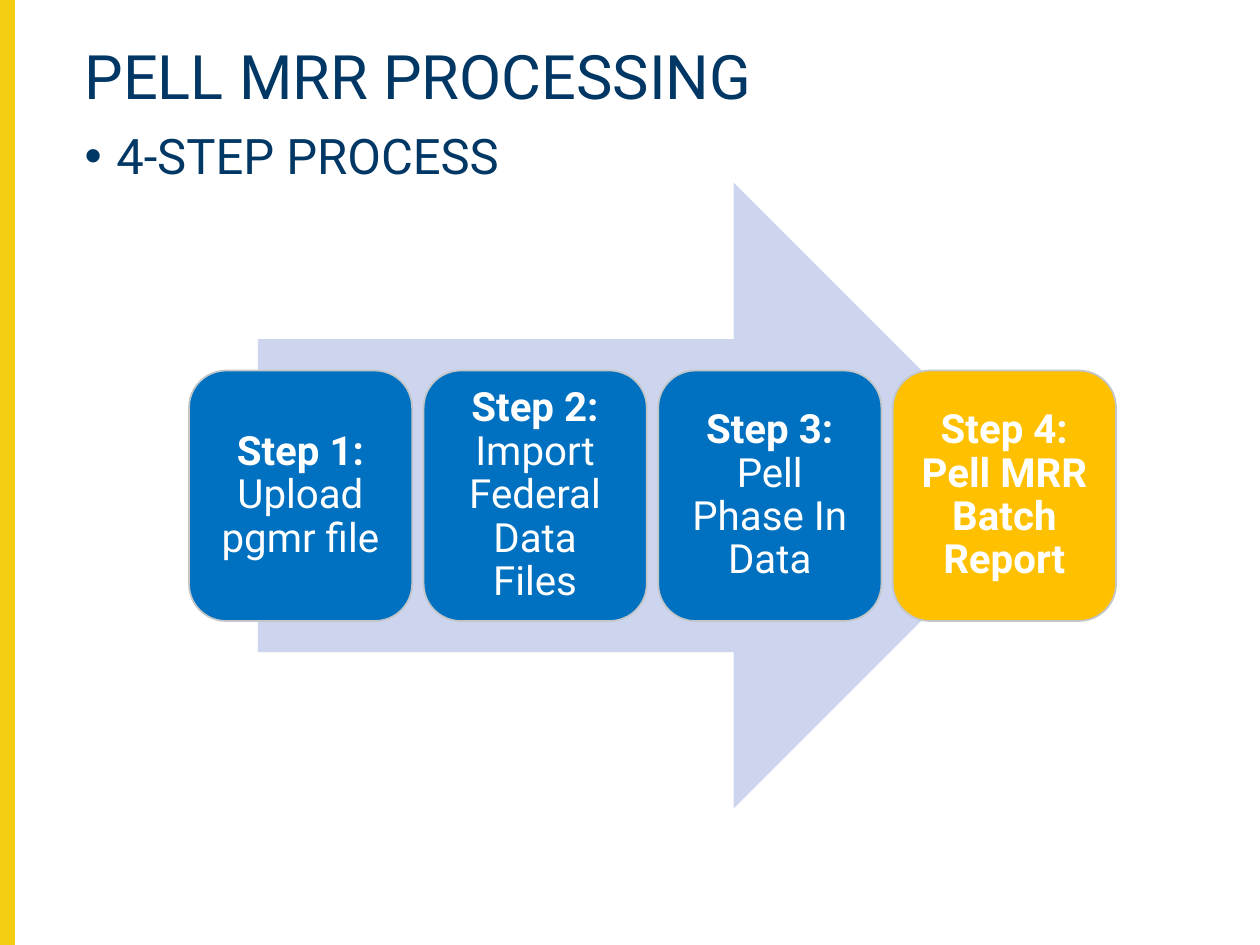
import pptx
import pptx.dml.color
import pptx.enum.shapes
import pptx.enum.text
import pptx.util

Cm = pptx.util.Cm
Pt = pptx.util.Pt
Shape = pptx.enum.shapes.MSO_SHAPE
Anchor = pptx.enum.text.MSO_ANCHOR
Align = pptx.enum.text.PP_ALIGN

TITLE = "PELL MRR PROCESSING"
BULLET = "4-STEP PROCESS"
STEPS = [
    ("Step 1: ", "Upload pgmr file", False, "0070C0"),
    ("Step 2: ", "Import Federal Data Files", False, "0070C0"),
    ("Step 3: ", "Pell Phase In Data", False, "0070C0"),
    ("Step 4: ", "Pell MRR Batch Report", True, "FFC000"),
]
NAVY, WHITE = "003764", "FFFFFF"
STEP_LEFT, STEP_TOP, STEP_WIDTH, STEP_HEIGHT = 3.81, 7.47, 4.5, 5.05
STEP_PITCH = 4.73


def color(value):
    return pptx.dml.color.RGBColor.from_string(value)


def apply(target, values):
    for name, value in values.items():
        setattr(target, name, value)


def place(box, left, top, width, height):
    apply(box, {"left": Cm(left), "top": Cm(top), "width": Cm(width), "height": Cm(height)})


def add_span(para, text, size, ink, bold=False):
    span = para.add_run()
    span.text = text
    apply(span.font, {"name": "Roboto", "size": Pt(size), "bold": bold})
    span.font.color.rgb = color(ink)


def add_shape(page, kind, area, fill, line=None):
    shape = page.shapes.add_shape(kind, *map(Cm, area))
    shape.shadow.inherit = False
    shape.fill.solid()
    shape.fill.fore_color.rgb = color(fill)
    if line:
        shape.line.color.rgb = color(line)
        shape.line.width = Pt(1)
    else:
        shape.line.fill.background()
    return shape


def fill_placeholder(box, area, text, size, space_before):
    place(box, *area)
    apply(box.text_frame, {
        "vertical_anchor": Anchor.TOP,
        "auto_size": pptx.enum.text.MSO_AUTO_SIZE.NONE,
        "word_wrap": True,
    })
    para = box.text_frame.paragraphs[0]
    apply(para, {"alignment": Align.LEFT, "line_spacing": 0.9, "space_before": Pt(space_before)})
    add_span(para, text, size, NAVY)
    return para


def add_step(page, index, label, task, bold, fill):
    area = (STEP_LEFT + index * STEP_PITCH, STEP_TOP, STEP_WIDTH, STEP_HEIGHT)
    frame = add_shape(page, Shape.ROUNDED_RECTANGLE, area, fill, "C3C6C8").text_frame
    margins = ("margin_left", "margin_top", "margin_right", "margin_bottom")
    apply(frame, dict.fromkeys(margins, Cm(0.25)))
    apply(frame, {"word_wrap": True, "vertical_anchor": Anchor.MIDDLE})
    para = frame.paragraphs[0]
    apply(para, {"alignment": Align.CENTER, "line_spacing": 0.9})
    add_span(para, label, 23, WHITE, True)
    add_span(para, task, 23, WHITE, bold)


def main():
    deck = pptx.Presentation()
    apply(deck, {"slide_width": Cm(25.4), "slide_height": Cm(19.05)})
    page = deck.slides.add_slide(deck.slide_layouts[1])

    add_shape(page, Shape.RECTANGLE, (0, 0, 0.28, 19.05), "F4CE12", "F4CE12")
    fill_placeholder(page.shapes.title, (1.45, 0.81, 23.06, 2.18), TITLE, 35, 0)
    para = fill_placeholder(page.placeholders[1], (1.45, 2.54, 23.16, 14.53), BULLET, 28, 10)
    properties = para._p.get_or_add_pPr()
    properties.set("marL", str(Cm(0.64)))
    properties.set("indent", str(Cm(-0.64)))

    add_shape(page, Shape.RIGHT_ARROW, (5.2, 3.68, 15.9, 12.62), "CCD5ED")
    for index, step in enumerate(STEPS):
        add_step(page, index, *step)
    deck.save("out.pptx")


if __name__ == "__main__":
    main()
